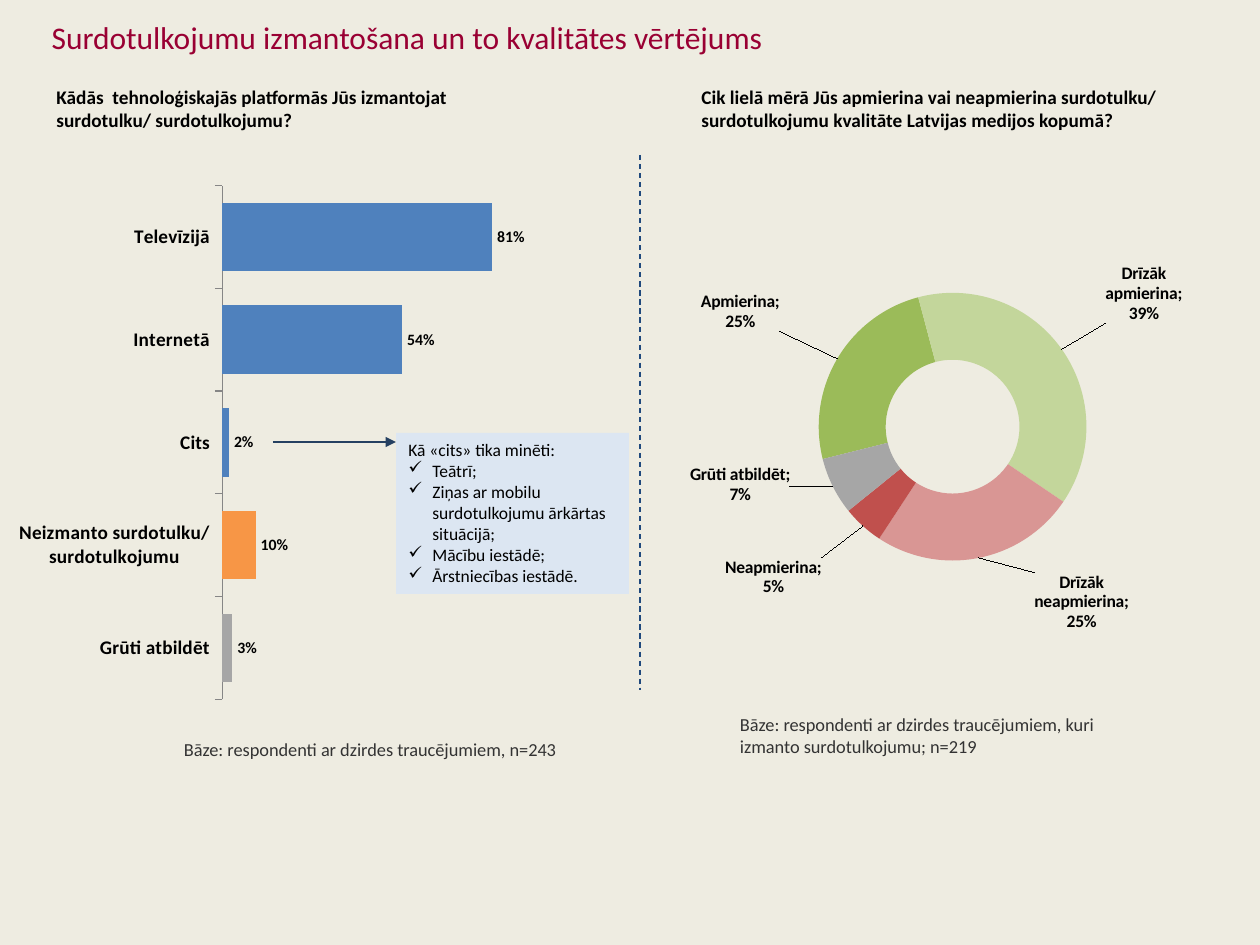
from copy import deepcopy
from math import cos, radians, sin

from lxml.etree import SubElement
from pptx import Presentation
from pptx.chart.data import CategoryChartData
from pptx.dml.color import RGBColor
from pptx.enum.chart import XL_CHART_TYPE as ChartType
from pptx.enum.chart import XL_LABEL_POSITION as LabelPosition
from pptx.enum.chart import XL_TICK_MARK as TickMark
from pptx.enum.dml import MSO_LINE
from pptx.enum.shapes import MSO_CONNECTOR, MSO_SHAPE
from pptx.enum.text import MSO_ANCHOR as Anchor
from pptx.enum.text import MSO_AUTO_SIZE as AutoSize
from pptx.enum.text import PP_ALIGN as Align
from pptx.oxml.ns import qn
from pptx.util import Inches, Pt

FONT = "Calibri"
SCALE = Inches(10) / 1260
BULLET_INDENT = 24

PLATFORMS = [
    ("Grūti atbildēt", 0.03, "A6A6A6"),
    ("Neizmanto surdotulku/ surdotulkojumu", 0.10, "F79646"),
    ("Cits", 0.02, "4F81BD"),
    ("Internetā", 0.54, "4F81BD"),
    ("Televīzijā", 0.81, "4F81BD"),
]
RATINGS = [
    ("Apmierina", 0.25, "9BBB59"),
    ("Drīzāk apmierina", 0.39, "C3D69B"),
    ("Drīzāk neapmierina", 0.25, "D99694"),
    ("Neapmierina", 0.05, "C0504D"),
    ("Grūti atbildēt", 0.07, "A6A6A6"),
]
RATING_LABEL_CENTERS = [(742, 312), (1145, 294), (1083, 602), (775, 577), (741, 485)]
RING_CENTER = (954, 427)
RING_MIDDLE_RADIUS = 100
RING_START = 256
OTHER_PLATFORMS = [
    "Teātrī;",
    "Ziņas ar mobilu surdotulkojumu ārkārtas situācijā;",
    "Mācību iestādē;",
    "Ārstniecības iestādē.",
]


def px(value):
    return round(value * SCALE)


def color(value):
    return RGBColor.from_string(value)


def add_child(parent, tag, **attributes):
    return SubElement(parent, qn(tag), attributes)


def style_font(font, size, value="000000", bold=False):
    font.name, font.size, font.bold = FONT, Pt(size), bold
    font.color.rgb = color(value)


def write_paragraph(paragraph, text, *, size, value="000000", bold=False, bullet=None):
    paragraph.alignment = Align.LEFT
    if bullet:
        properties = paragraph._p.get_or_add_pPr()
        properties.set("marL", str(px(BULLET_INDENT)))
        properties.set("indent", str(-px(BULLET_INDENT)))
        add_child(properties, "a:buChar", char=bullet)
    run = paragraph.add_run()
    run.text = text
    style_font(run.font, size, value, bold)


def add_text(slide, box, text, *, anchor=Anchor.TOP, inset=None, **format):
    shape = slide.shapes.add_textbox(*map(px, box))
    frame = shape.text_frame
    frame.word_wrap = True
    frame.vertical_anchor = anchor
    if inset is not None:
        frame.margin_left = frame.margin_right = px(inset)
        frame.margin_top = frame.margin_bottom = px(inset)
    write_paragraph(frame.paragraphs[0], text, **format)


def set_title(slide, box, text, **format):
    title = slide.shapes.title
    title.left, title.top, title.width, title.height = map(px, box)
    title.text_frame.auto_size = AutoSize.NONE
    title.text_frame.vertical_anchor = Anchor.MIDDLE
    write_paragraph(title.text_frame.paragraphs[0], text, **format)


def add_callout(slide, box, heading, items):
    shape = slide.shapes.add_shape(MSO_SHAPE.RECTANGLE, *map(px, box))
    shape.shadow.inherit = False
    shape.fill.solid()
    shape.fill.fore_color.rgb = color("DCE6F2")
    shape.line.fill.background()
    frame = shape.text_frame
    frame.word_wrap = True
    frame.vertical_anchor = Anchor.TOP
    frame.auto_size = AutoSize.SHAPE_TO_FIT_TEXT
    write_paragraph(frame.paragraphs[0], heading, size=10)
    for item in items:
        write_paragraph(frame.add_paragraph(), item, size=10, bullet="✓")


def add_line(slide, ends, value, *, dash=None, arrow=False):
    connector = slide.shapes.add_connector(MSO_CONNECTOR.STRAIGHT, *map(px, ends))
    connector.line.color.rgb = color(value)
    connector.line.width = Pt(0.75)
    if dash:
        connector.line.dash_style = dash
    if arrow:
        add_child(connector.line._ln, "a:tailEnd", type="triangle")
    add_child(connector._element.spPr, "a:effectLst")


def set_layout(layout, **values):
    manual = add_child(layout, "c:manualLayout")
    for name, value in values.items():
        add_child(manual, f"c:{name}", val=str(value))


def add_answer_chart(slide, chart_type, box, answers, plot_box):
    data = CategoryChartData(number_format="0%")
    data.categories = [name for name, _, _ in answers]
    data.add_series("Series 1", [share for _, share, _ in answers])
    chart = slide.shapes.add_chart(chart_type, *map(px, box), data).chart
    chart.has_title = chart.has_legend = False
    style_font(chart.font, 18)

    plot_area = chart._chartSpace.chart.plotArea
    for old_layout in plot_area.findall(qn("c:layout")):
        plot_area.remove(old_layout)
    layout = add_child(plot_area, "c:layout")
    plot_area.insert(0, layout)
    set_layout(layout, layoutTarget="inner", xMode="edge", yMode="edge",
               **dict(zip("xywh", plot_box)))

    series = chart.plots[0].series[0]
    for index, (_, _, value) in enumerate(answers):
        fill = series.points[index].format.fill
        fill.solid()
        fill.fore_color.rgb = color(value)
    labels = series.data_labels
    labels.show_value = True
    labels.number_format, labels.number_format_is_linked = "0%", False
    return chart, labels


def add_platform_chart(slide):
    chart, labels = add_answer_chart(slide, ChartType.BAR_CLUSTERED, (15, 185, 546, 525),
                                     PLATFORMS, (0.38, 0, 0.61, 0.98))
    plot = chart.plots[0]
    plot.gap_width = 50
    plot.vary_by_categories = False
    labels.position = LabelPosition.OUTSIDE_END
    style_font(labels.font, 9, bold=True)
    categories, values = chart.category_axis, chart.value_axis
    categories.major_tick_mark = TickMark.OUTSIDE
    categories.format.line.color.rgb = color("868686")
    style_font(categories.tick_labels.font, 11, bold=True)
    values.minimum_scale, values.maximum_scale, values.major_unit = 0, 1, 0.25
    values.has_major_gridlines = False
    values.visible = False


def add_rating_chart(slide):
    box = (690, 209, 515, 427)
    chart, labels = add_answer_chart(slide, ChartType.DOUGHNUT, box, RATINGS,
                                     (0.25, 0.18, 0.52, 0.66))
    plot = chart.plots[0]
    plot.vary_by_categories = True
    for tag, value in (("c:firstSliceAng", RING_START), ("c:holeSize", 40)):
        plot._element.find(qn(tag)).set("val", str(value))
    labels.show_category_name = True
    style_font(labels.font, 10, bold=True)
    place_rating_labels(labels._element, box)


def place_rating_labels(labels, box):
    for leader in labels.findall(qn("c:showLeaderLines")):
        labels.remove(leader)
    add_child(labels, "c:separator").text = "; "
    shared_format = list(labels)
    add_child(labels, "c:showLeaderLines", val="1")

    total = sum(share for _, share, _ in RATINGS)
    angle = RING_START
    for index, (_, share, _) in enumerate(RATINGS):
        sweep = 360 * share / total
        middle = radians(angle + sweep / 2)
        angle += sweep
        x, y = RATING_LABEL_CENTERS[index]
        shift_x = x - RING_CENTER[0] - RING_MIDDLE_RADIUS * sin(middle)
        shift_y = y - RING_CENTER[1] + RING_MIDDLE_RADIUS * cos(middle)
        label = add_child(labels, "c:dLbl")
        add_child(label, "c:idx", val=str(index))
        set_layout(add_child(label, "c:layout"), x=shift_x / box[2], y=shift_y / box[3])
        label.extend(deepcopy(shared_format))
        labels.insert(index, label)


def main():
    presentation = Presentation()
    presentation.slide_width, presentation.slide_height = px(1260), px(945)
    slide = presentation.slides.add_slide(presentation.slide_layouts[5])
    slide.background.fill.solid()
    slide.background.fill.fore_color.rgb = color("EEECE1")

    set_title(slide, (39, 9, 1181, 55), "Surdotulkojumu izmantošana un to kvalitātes vērtējums",
              size=18, value="990033")
    add_text(slide, (44, 79, 476, 55), "Kādās  tehnoloģiskajās platformās Jūs izmantojat "
             "surdotulku/ surdotulkojumu?", size=11, bold=True)
    add_text(slide, (689, 79, 546, 126), "Cik lielā mērā Jūs apmierina vai neapmierina surdotulku/ "
             "surdotulkojumu kvalitāte Latvijas medijos kopumā?", size=11, bold=True)
    add_platform_chart(slide)
    add_line(slide, (640, 155, 640, 690), "1F497D", dash=MSO_LINE.DASH)
    add_rating_chart(slide)
    base_format = dict(anchor=Anchor.BOTTOM, inset=0, size=10.5, value="333333")
    add_text(slide, (184, 726, 476, 34), "Bāze: respondenti ar dzirdes traucējumiem, n=243",
             **base_format)
    add_text(slide, (740, 723, 357, 34), "Bāze: respondenti ar dzirdes traucējumiem, kuri izmanto "
             "surdotulkojumu; n=219", **base_format)
    add_callout(slide, (396, 433, 233, 161), "Kā «cits» tika minēti:", OTHER_PLATFORMS)
    add_line(slide, (273, 442, 396, 442), "254061", arrow=True)
    presentation.save("out.pptx")


if __name__ == "__main__":
    main()
